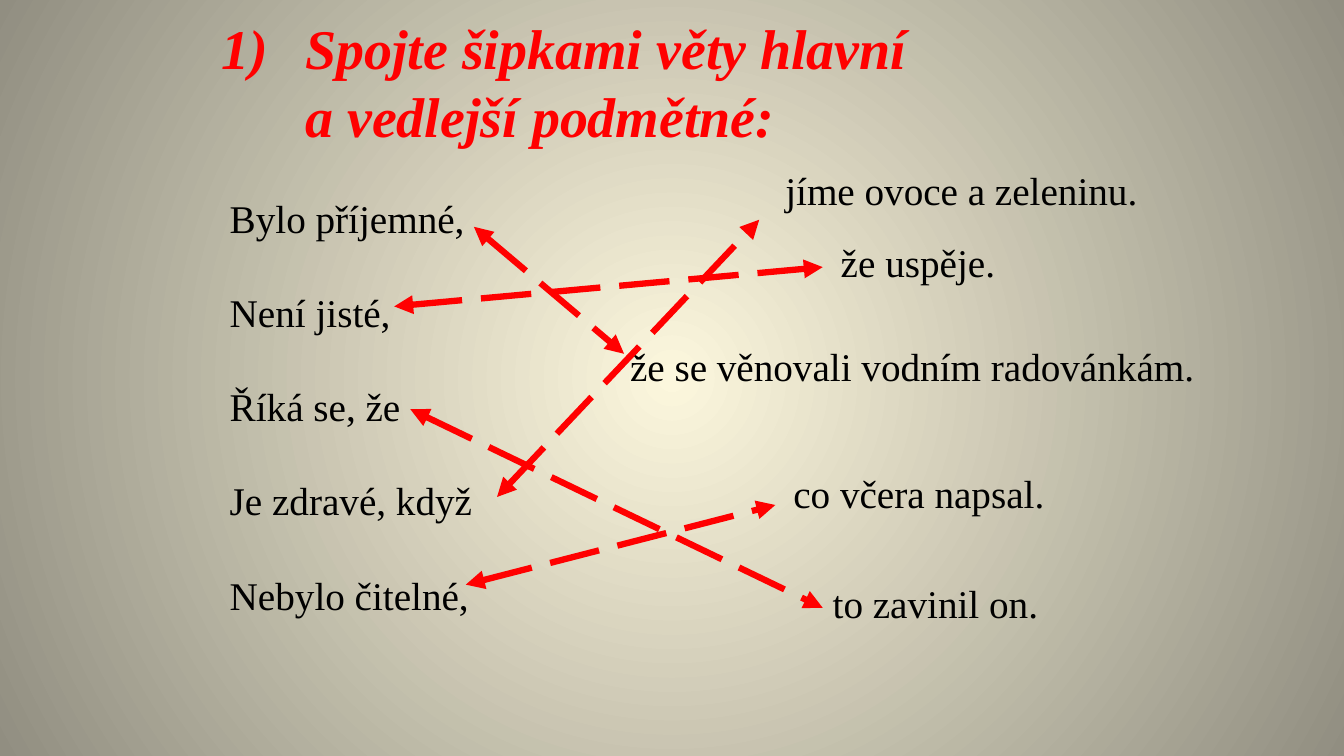
from dataclasses import dataclass

from lxml import etree
from pptx import Presentation
from pptx.dml.color import RGBColor
from pptx.enum.dml import MSO_LINE
from pptx.enum.shapes import MSO_CONNECTOR
from pptx.enum.text import MSO_ANCHOR
from pptx.oxml.ns import qn
from pptx.util import Inches, Pt

STRAIGHT = MSO_CONNECTOR.STRAIGHT
LONG_DASH = MSO_LINE.LONG_DASH
MIDDLE = MSO_ANCHOR.MIDDLE


@dataclass(frozen=True)
class Theme:
    font: str = "Times New Roman"
    red: RGBColor = RGBColor(0xFF, 0x00, 0x00)
    black: RGBColor = RGBColor(0x00, 0x00, 0x00)
    glow: RGBColor = RGBColor(0xFC, 0xF7, 0xDD)
    edge: RGBColor = RGBColor(0x91, 0x8E, 0x81)
    title_size: int = 40
    body_size: int = 28
    clause_gap: float = 33.6
    arrow_width: float = 4.5


THEME = Theme()
TITLE_FORMAT = {"name": THEME.font, "size": Pt(THEME.title_size), "bold": True, "italic": True}
BODY_FORMAT = {"name": THEME.font, "size": Pt(THEME.body_size)}

TITLE = "Spojte šipkami věty hlavní\va vedlejší podmětné:"
MAIN_CLAUSES = ["Bylo příjemné,", "Není jisté,", "Říká se, že", "Je zdravé, když", "Nebylo čitelné,"]
SUBORDINATE_CLAUSES = [
    ("že uspěje.", 8.24, 2.36, 2.48),
    ("jíme ovoce a zeleninu.", 7.69, 1.65, 4.29),
    ("co včera napsal.", 7.77, 4.65, 3.54),
    ("že se věnovali vodním radovánkám.", 6.15, 3.39, 6.02),
    ("to zavinil on.", 8.16, 5.75, 2.48),
]
ARROWS = [
    (4.7, 2.25, 6.19, 3.51),
    (4.07, 4.06, 8.16, 6.03),
    (3.91, 3.04, 8.16, 2.65),
    (4.62, 5.8, 7.69, 5.01),
    (4.93, 4.93, 7.53, 2.18),
]


def paint_background(page):
    fill = page.background.fill
    fill.gradient()
    for stop, color, position in zip(fill.gradient_stops, (THEME.glow, THEME.edge), (0, 1)):
        stop.color.rgb = color
        stop.position = position
    gradient = page.background._cSld.find(".//" + qn("a:gradFill"))
    linear = gradient.find(qn("a:lin"))
    circle = etree.Element(qn("a:path"), {"path": "circle"})
    center = dict.fromkeys("ltrb", "50000")
    etree.SubElement(circle, qn("a:fillToRect"), center)
    gradient.replace(linear, circle)


def add_text(page, lines, place, formats, color, gap=0):
    box = page.shapes.add_textbox(*map(Inches, place))
    frame = box.text_frame
    frame.word_wrap = True
    frame.vertical_anchor = MIDDLE
    for index, line in enumerate(lines):
        para = frame.paragraphs[0] if index == 0 else frame.add_paragraph()
        para.text = line
        if index:
            para.space_before = Pt(gap)
        for span in para.runs:
            for name, value in formats.items():
                setattr(span.font, name, value)
            span.font.color.rgb = color
    return box


def number_paragraph(para, indent):
    properties = para._p.get_or_add_pPr()
    properties.set("marL", str(Inches(indent)))
    properties.set("indent", str(-Inches(indent)))
    etree.SubElement(properties, qn("a:buFont"), {"typeface": THEME.font})
    etree.SubElement(properties, qn("a:buAutoNum"), {"type": "arabicParenR"})


def add_arrow(page, ends):
    arrow = page.shapes.add_connector(STRAIGHT, *map(Inches, ends))
    arrow.line.color.rgb = THEME.red
    arrow.line.width = Pt(THEME.arrow_width)
    arrow.line.dash_style = LONG_DASH
    properties = arrow._element.spPr
    outline = properties.find(qn("a:ln"))
    for end in ("a:headEnd", "a:tailEnd"):
        etree.SubElement(outline, qn(end), {"type": "triangle"})
    etree.SubElement(properties, qn("a:effectLst"))


def main():
    deck = Presentation()
    deck.slide_width, deck.slide_height = Inches(13.33), Inches(7.5)
    page = deck.slides.add_slide(deck.slide_layouts[6])
    paint_background(page)
    title = add_text(page, [TITLE], (2.1, 0, 8.5, 1.61), TITLE_FORMAT, THEME.red)
    number_paragraph(title.text_frame.paragraphs[0], 0.83)
    add_text(page, MAIN_CLAUSES, (2.18, 1.78, 9.21, 4.5), BODY_FORMAT, THEME.black, THEME.clause_gap)
    for clause, left, top, width in SUBORDINATE_CLAUSES:
        add_text(page, [clause], (left, top, width, 0.47), BODY_FORMAT, THEME.black)
    for ends in ARROWS:
        add_arrow(page, ends)
    deck.save("out.pptx")


if __name__ == "__main__":
    main()
